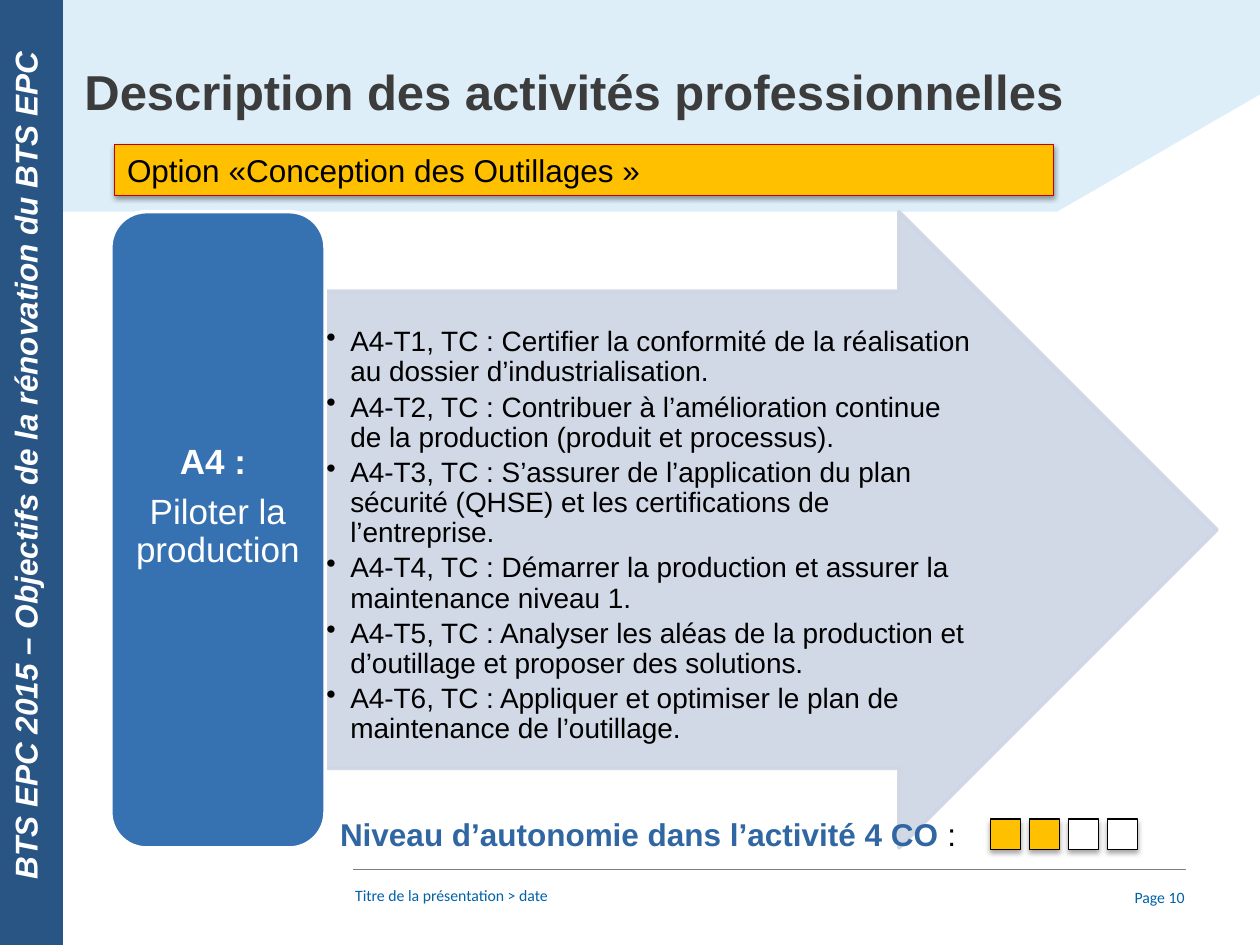
from lxml import etree
from pptx import Presentation
from pptx.dml.color import RGBColor
from pptx.enum.shapes import MSO_CONNECTOR, MSO_SHAPE
from pptx.enum.text import MSO_ANCHOR, MSO_AUTO_SIZE, PP_ALIGN
from pptx.oxml.ns import qn
from pptx.util import Inches, Pt

RECT, ROUNDED, ARROW = MSO_SHAPE.RECTANGLE, MSO_SHAPE.ROUNDED_RECTANGLE, MSO_SHAPE.RIGHT_ARROW
STRAIGHT = MSO_CONNECTOR.STRAIGHT
TOP, MIDDLE = MSO_ANCHOR.TOP, MSO_ANCHOR.MIDDLE
LEFT, CENTER, RIGHT = PP_ALIGN.LEFT, PP_ALIGN.CENTER, PP_ALIGN.RIGHT
NO_FIT = MSO_AUTO_SIZE.NONE

COLORS = {
    "sky": "DEEEF8", "navy": "295585", "blue": "3671B2", "label": "3066A1",
    "footer": "0062A8", "arrow": "CED5E4", "amber": "FFC000", "red": "C00000",
    "title": "3C3C3C", "gray": "7F7F7F", "black": "000000", "white": "FFFFFF",
}
TASKS = [
    "A4-T1, TC : Certifier la conformité de la réalisation au dossier d’industrialisation.",
    "A4-T2, TC : Contribuer à l’amélioration continue de la production (produit et processus).",
    "A4-T3, TC : S’assurer de l’application du plan sécurité (QHSE) et les certifications de l’entreprise.",
    "A4-T4, TC : Démarrer la production et assurer la maintenance niveau 1.",
    "A4-T5, TC : Analyser les aléas de la production et d’outillage et proposer des solutions.",
    "A4-T6, TC : Appliquer et optimiser le plan de maintenance de l’outillage.",
]


def rgb(name):
    return RGBColor.from_string(COLORS[name])


def add_node(parent, tag, **attributes):
    return etree.SubElement(parent, qn(tag), {key: str(value) for key, value in attributes.items()})


class SlideBuilder:
    """Holds the text style and the current slide."""

    def __init__(self, page, font="Arial", size=18):
        self.page, self.font, self.size = page, font, size

    def paint(self, item, fill, line=None, width=0.75):
        item.shadow.inherit = False
        item.fill.solid()
        item.fill.fore_color.rgb = rgb(fill)
        if line:
            item.line.color.rgb = rgb(line)
            item.line.width = Pt(width)
        else:
            item.line.fill.background()

    def shape(self, kind, left, top, width, height, fill, line=None, line_width=0.75):
        item = self.page.shapes.add_shape(
            kind, Inches(left), Inches(top), Inches(width), Inches(height))
        self.paint(item, fill, line, line_width)
        return item

    def polygon(self, points, fill):
        corners = [(Inches(x), Inches(y)) for x, y in points]
        builder = self.page.shapes.build_freeform(*corners[0])
        builder.add_line_segments(corners[1:], close=True)
        self.paint(builder.convert_to_shape(), fill)

    def line(self, start, end, color, width):
        rule = self.page.shapes.add_connector(
            STRAIGHT, *(Inches(value) for value in start + end))
        rule.line.color.rgb = rgb(color)
        rule.line.width = Pt(width)
        add_node(rule._element.spPr, "a:effectLst")

    def textbox(self, left, top, width, height):
        return self.page.shapes.add_textbox(
            Inches(left), Inches(top), Inches(width), Inches(height))

    def frame(self, item, anchor=TOP, insets=(0.1, 0.05, 0.1, 0.05)):
        frame = item.text_frame
        frame.word_wrap = True
        frame.auto_size = NO_FIT
        frame.vertical_anchor = anchor
        frame.margin_left, frame.margin_top, frame.margin_right, frame.margin_bottom = map(Inches, insets)
        return frame

    def para(self, frame, spans, align=LEFT, spacing=None, after=None, indent=0, bullet=False):
        """Each span is (text, color) plus an optional dict of font settings."""
        first = frame.paragraphs[0]
        para = frame.add_paragraph() if first.runs else first
        para.alignment = align
        if spacing:
            para.line_spacing = spacing
        if after:
            para.space_after = Pt(after)
        if indent:
            settings = para._p.get_or_add_pPr()
            settings.set("marL", str(Inches(indent)))
            settings.set("indent", str(-Inches(indent) if bullet else 0))
            if bullet:
                add_node(settings, "a:buChar", char="•")
        for text, color, *options in spans:
            style = options[0] if options else {}
            span = para.add_run()
            span.text = text
            span.font.name = style.get("font", self.font)
            span.font.size = Pt(style.get("size", self.size))
            span.font.bold = style.get("bold", False)
            span.font.italic = style.get("italic", False)
            span.font.color.rgb = rgb(color)

    def fade(self, item, percent):
        for color in item._element.spPr.iter(qn("a:srgbClr")):
            add_node(color, "a:alpha", val=percent * 1000)

    def drop_shadow(self, item, percent, distance):
        effects = item._element.spPr.find(qn("a:effectLst"))
        shadow = add_node(effects, "a:outerShdw", blurRad=Pt(3.1), dist=Pt(distance),
                          dir=90 * 60000, rotWithShape=0)
        color = add_node(shadow, "a:srgbClr", val=COLORS["black"])
        add_node(color, "a:alpha", val=percent * 1000)


def main():
    deck = Presentation()
    deck.slide_width, deck.slide_height = Inches(10), Inches(7.5)
    page = deck.slides.add_slide(deck.slide_layouts[5])
    build = SlideBuilder(page)

    # Header panel and footer
    build.polygon([(10, 0), (0, 0), (0, 1.68), (8.39, 1.68), (10, 0.75)], "sky")
    small = {"font": "Calibri", "size": 9}
    footer = build.frame(build.textbox(2.72, 6.98, 5.91, 0.25))
    build.para(footer, [("Titre de la présentation > date", "footer", small)])
    build.line((2.8, 6.9), (9.41, 6.9), "gray", 0.5)
    number = build.frame(build.textbox(8.62, 6.95, 0.88, 0.34), MIDDLE)
    build.para(number, [("Page 10", "footer", small)], RIGHT)

    # Title, brought in front of the header panel
    title = page.shapes.title
    page.shapes._spTree.append(title._element)
    title.left, title.top, title.width, title.height = map(Inches, (0.67, 0.29, 9, 0.87))
    build.para(build.frame(title, MIDDLE, (0, 0, 0, 0)),
               [("Description des activités professionnelles", "title", {"size": 28, "bold": True})])

    # Task arrow
    arrow = build.shape(ARROW, 2.58, 1.68, 7.08, 5.05, "arrow", "arrow", 2)
    arrow.adjustments[0], arrow.adjustments[1] = 0.75, 0.5
    build.fade(arrow, 90)
    tasks = build.frame(build.textbox(2.58, 2.59, 5.19, 3.51), insets=(0.01,) * 4)
    for task in TASKS:
        build.para(tasks, [(task, "black", {"size": 16})],
                   spacing=0.9, after=2.8, indent=0.19, bullet=True)

    # Activity card
    card = build.shape(ROUNDED, 0.88, 1.68, 1.7, 5.05, "blue", "white", 2)
    activity = build.frame(card, MIDDLE, (0.08, 0.04, 0.08, 0.4))
    for text, bold in (("A4 : ", True), ("Piloter la production", False)):
        build.para(activity, [(text, "white", {"size": 20, "bold": bold})],
                   CENTER, spacing=0.9, after=7)

    # Side band
    band = build.frame(build.shape(RECT, 0, 0, 0.5, 7.5, "navy"))
    band._txBody.bodyPr.set("vert", "vert270")
    build.para(band, [("BTS EPC 2015 – Objectifs de la rénovation du BTS EPC", "white",
                       {"bold": True, "italic": True})], indent=0.42)

    # Option banner
    banner = build.shape(RECT, 0.91, 1.15, 7.45, 0.4, "amber", "red")
    build.drop_shadow(banner, 38, 1.6)
    build.para(build.frame(banner), [("Option «Conception des Outillages »", "black")])

    # Autonomy level
    level = build.frame(build.textbox(2.6, 6.42, 5.99, 0.4))
    build.para(level, [("Niveau d’autonomie dans l’activité 4 CO ", "label", {"bold": True}),
                       (":", "black")])
    for index, fill in enumerate(("amber", "amber", "white", "white")):
        square = build.shape(RECT, 7.86 + index * 0.31, 6.5, 0.24, 0.24, fill, "black")
        build.drop_shadow(square, 35, 1.8)

    deck.save("out.pptx")


if __name__ == "__main__":
    main()
